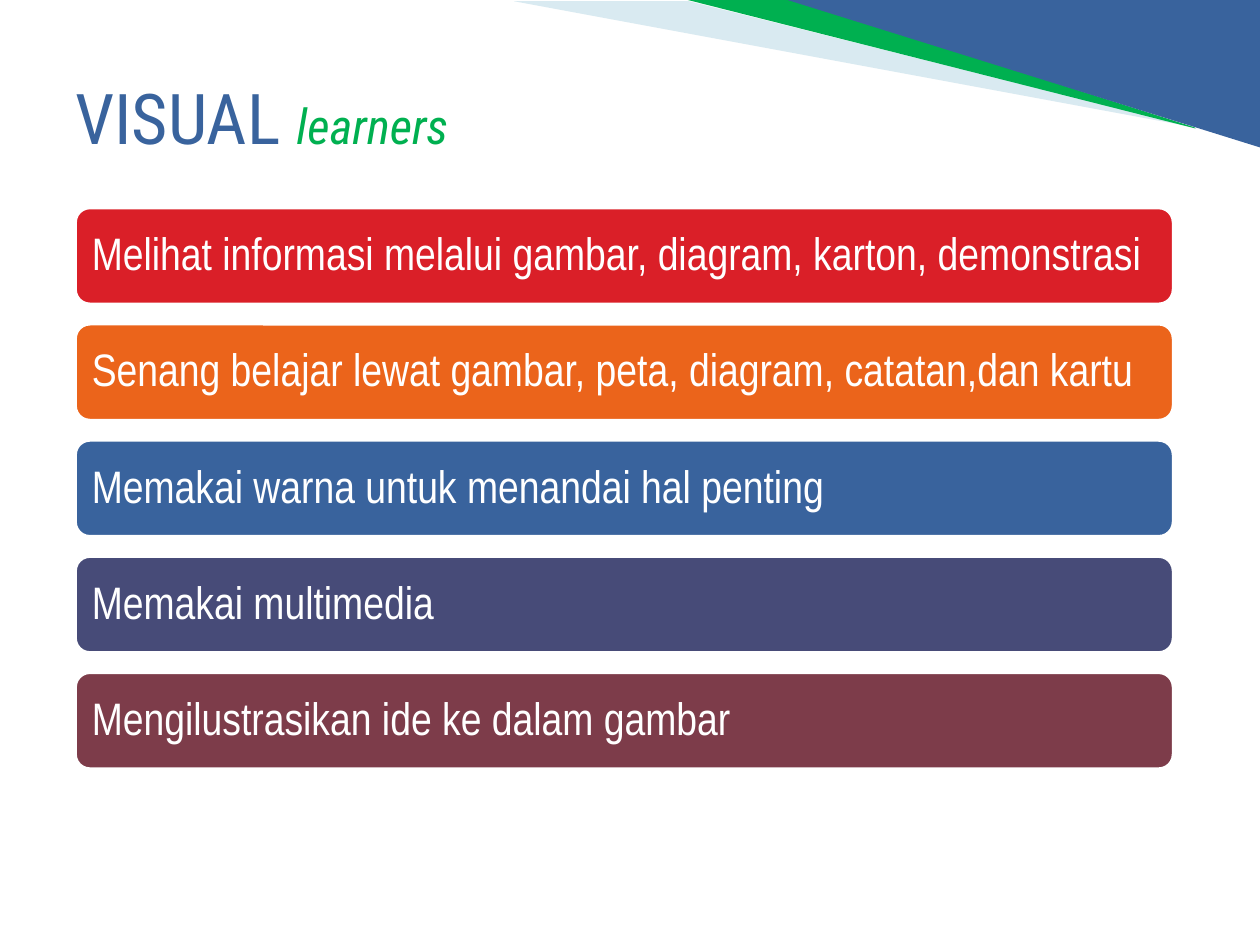
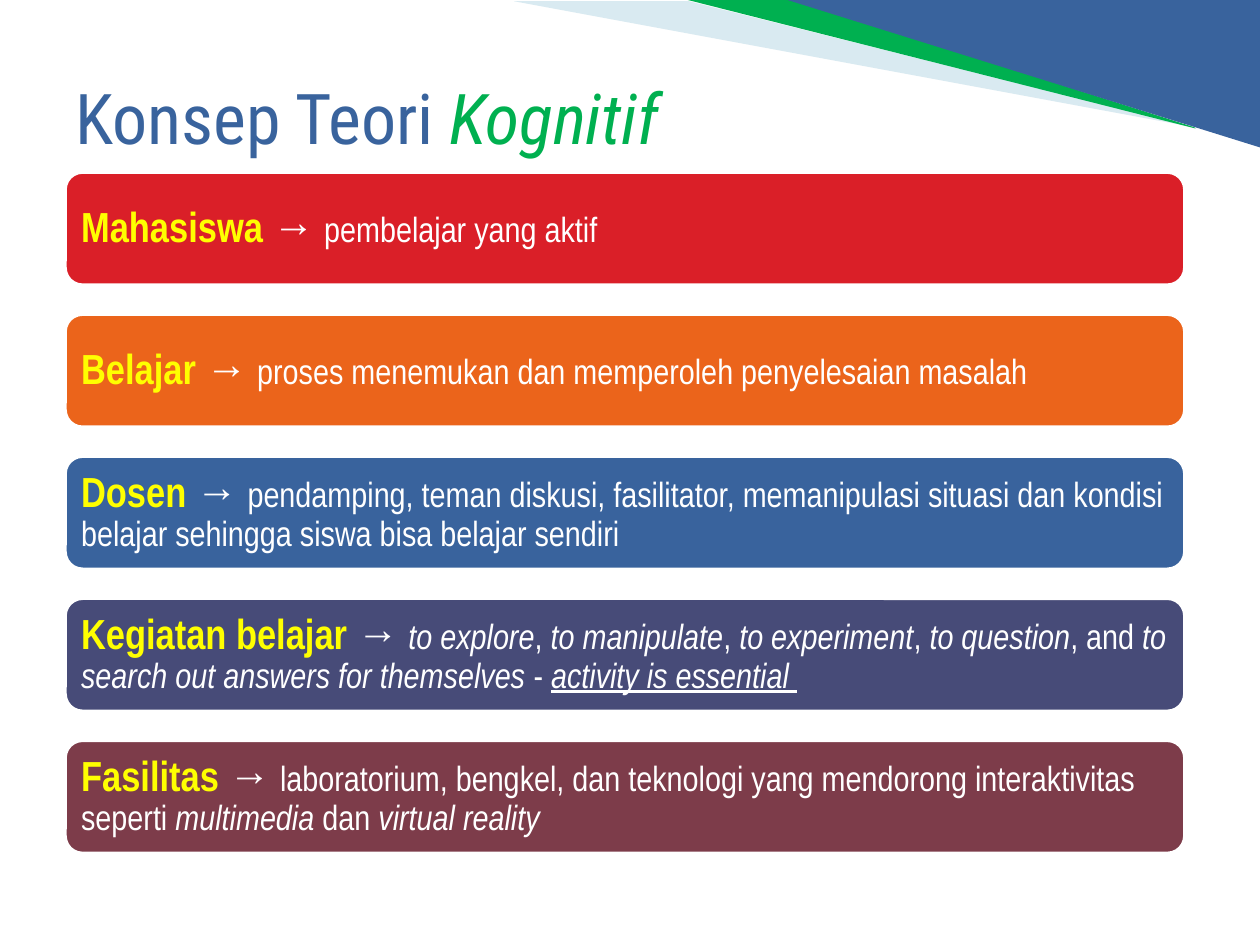
from pptx import Presentation
from pptx.dml.color import RGBColor
from pptx.enum.shapes import MSO_SHAPE as Geo
from pptx.enum.text import MSO_ANCHOR as Anchor, PP_ALIGN as Align
from pptx.oxml import parse_xml
from pptx.oxml.ns import nsdecls
from pptx.util import Inches, Pt

WIDE, HIGH = 10, 7.5
BLUE, GREEN, PALE, WHITE, YELLOW = "39639D", "00B050", "A0CBDC", "FFFFFF", "FFFF00"
BARS = ["DA1F28", "EB641B", BLUE, "474B78", "7D3C4A"]
HEAD, BODY = "Roboto Condensed", "Arial Narrow"


# Lengths are percent of the slide's width and height
def col(share):
    return Inches(WIDE * share / 100)


def row(share):
    return Inches(HIGH * share / 100)


def rgb(code):
    return RGBColor.from_string(code)


def paint(shape, code, alpha=None):
    shape.shadow.inherit = False
    shape.fill.solid()
    shape.fill.fore_color.rgb = rgb(code)
    shape.line.fill.background()
    if alpha:
        tint = shape.fill._xPr.solidFill[0]
        tint.append(parse_xml(f'<a:alpha {nsdecls("a")} val="{alpha * 1000}"/>'))


def add_run(para, text, font, size, code, style=""):
    """Style letters: b bold, i italic, u underline."""
    run = para.add_run()
    run.text = text
    face = run.font
    face.name, face.size, face.color.rgb = font, Pt(size), rgb(code)
    face.bold, face.italic, face.underline = (key in style for key in "biu")


def set_frame(shape):
    frame = shape.text_frame
    frame.word_wrap = True
    frame.vertical_anchor = Anchor.MIDDLE
    para = frame.paragraphs[0]
    para.alignment = Align.LEFT
    return frame, para


# Corner wedges at the top right
def add_wedge(slide, points, code, alpha=None):
    spots = [(col(x), row(y)) for x, y in points]
    pen = slide.shapes.build_freeform(*spots[0])
    pen.add_line_segments(spots[1:], close=True)
    paint(pen.convert_to_shape(), code, alpha)


def add_corner(slide):
    add_wedge(slide, [(94.8, 13.47), (40.8, 0.13), (54.7, 0.13)], PALE, 40)
    add_wedge(slide, [(94.9, 13.6), (54.6, 0), (63.1, 0), (94.8, 13.47)], GREEN)
    corner = slide.shapes.add_shape(
        Geo.RIGHT_TRIANGLE, col(62.5), 0, col(37.5), row(15.6))
    corner.rotation = 180
    paint(corner, BLUE)


# Title: blue lead, green italic tail
def add_title(slide, lead, tail, size):
    box = slide.shapes.add_textbox(col(5), row(4), col(90), row(16.67))
    para = set_frame(box)[1]
    add_run(para, lead, HEAD, 40, BLUE)
    add_run(para, tail, HEAD, size, GREEN, "i")


# Stack of equal bars, spread evenly over the box
def add_stack(slide, box, thick, inset, items):
    left, top, width, height = box
    step = (height - thick) / (len(items) - 1)
    for i, (runs, code) in enumerate(zip(items, BARS)):
        bar = slide.shapes.add_shape(
            Geo.ROUNDED_RECTANGLE,
            col(left), row(top + i * step), col(width), row(thick))
        paint(bar, code)
        bar.line.color.rgb = rgb(WHITE)
        bar.line.width = Pt(4.33)
        frame, para = set_frame(bar)
        frame.margin_left = frame.margin_right = col(inset)
        frame.margin_top = frame.margin_bottom = col(inset)
        para.line_spacing = 0.9
        for text, size, ink, style in runs:
            add_run(para, text, BODY, size, ink, style)


def plain(text):
    return [(text, 26, WHITE, "")]


def term(name, *parts):
    """Yellow term, arrow, then (text, style) parts."""
    lead = [(name + " ", 24, YELLOW, "b"), ("→ ", 24, WHITE, "b")]
    return lead + [(text, 20, WHITE, style) for text, style in parts]


TRAITS = [plain(text) for text in (
    "Melihat informasi melalui gambar, diagram, karton, demonstrasi",
    "Senang belajar lewat gambar, peta, diagram, catatan,dan kartu",
    "Memakai warna untuk menandai hal penting",
    "Memakai multimedia",
    "Mengilustrasikan ide ke dalam gambar",
)]

TERMS = [
    term("Mahasiswa", ("pembelajar yang aktif", "")),
    term("Belajar", ("proses menemukan dan memperoleh penyelesaian masalah", "")),
    term("Dosen", ("pendamping, teman diskusi, fasilitator, memanipulasi situasi "
                   "dan kondisi belajar sehingga siswa bisa belajar sendiri", "")),
    term("Kegiatan belajar",
         ("to explore", "i"), (", ", ""), ("to manipulate", "i"), (", ", ""),
         ("to experiment", "i"), (", ", ""), ("to question", "i"), (", and ", ""),
         ("to search out answers for themselves ", "i"), ("- ", ""),
         ("activity is essential ", "iu")),
    term("Fasilitas",
         ("laboratorium, bengkel, dan teknologi yang mendorong "
          "interaktivitas seperti ", ""),
         ("multimedia ", "i"), ("dan ", ""), ("virtual reality", "i")),
]

# Title runs, stack box, bar height, text inset, items
SLIDES = [
    (("VISUAL ", "learners", 28), (5.8, 21.75, 87.5, 59.85), 10.67, 1.1, TRAITS),
    (("Konsep Teori ", "Kognitif", 40), (5, 18, 89.2, 72.53), 12.4, 1, TERMS),
]


def main():
    deck = Presentation()
    deck.slide_width, deck.slide_height = Inches(WIDE), Inches(HIGH)
    for title, *stack in SLIDES:
        slide = deck.slides.add_slide(deck.slide_layouts[6])
        add_corner(slide)
        add_title(slide, *title)
        add_stack(slide, *stack)
    deck.save("out.pptx")


if __name__ == "__main__":
    main()
